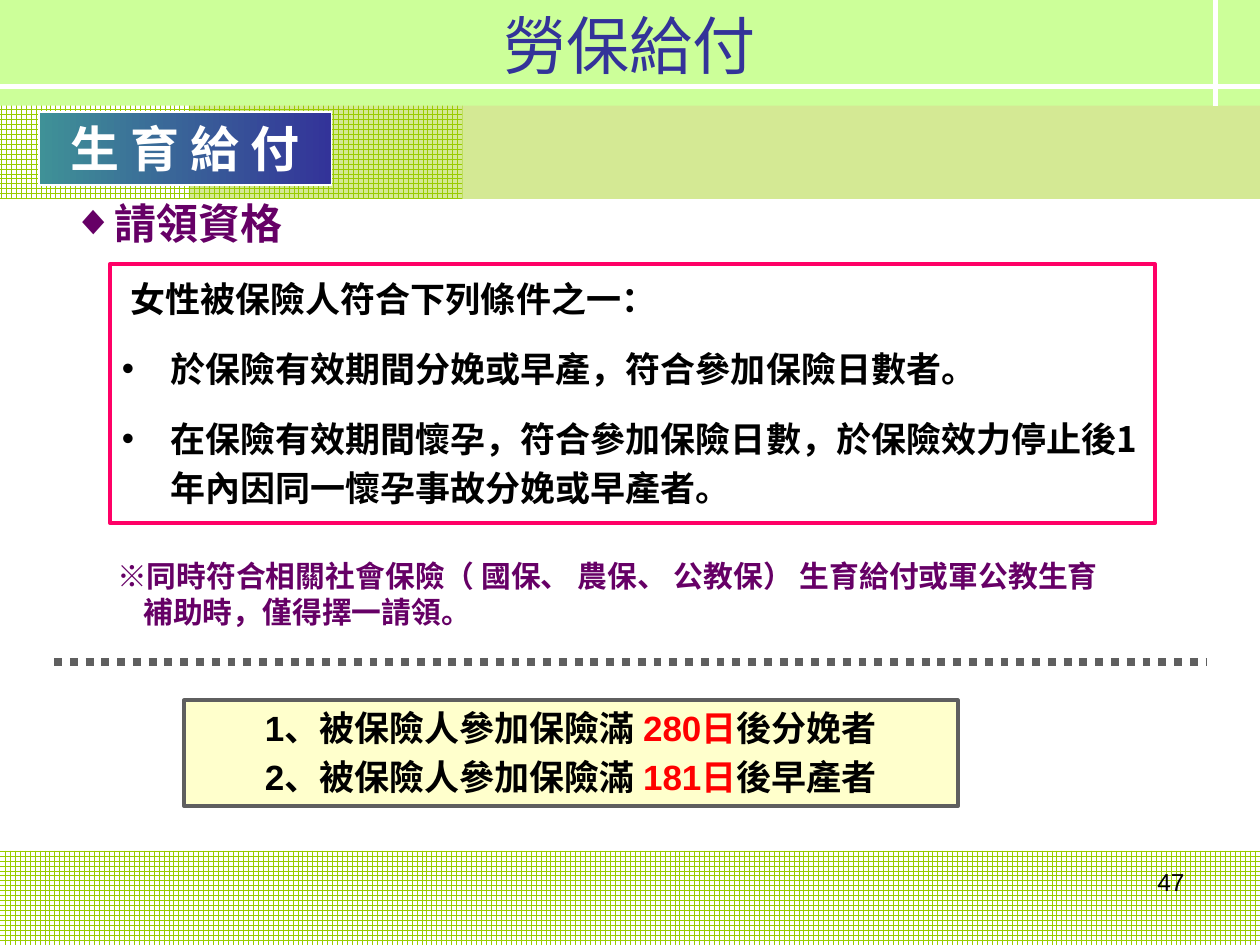
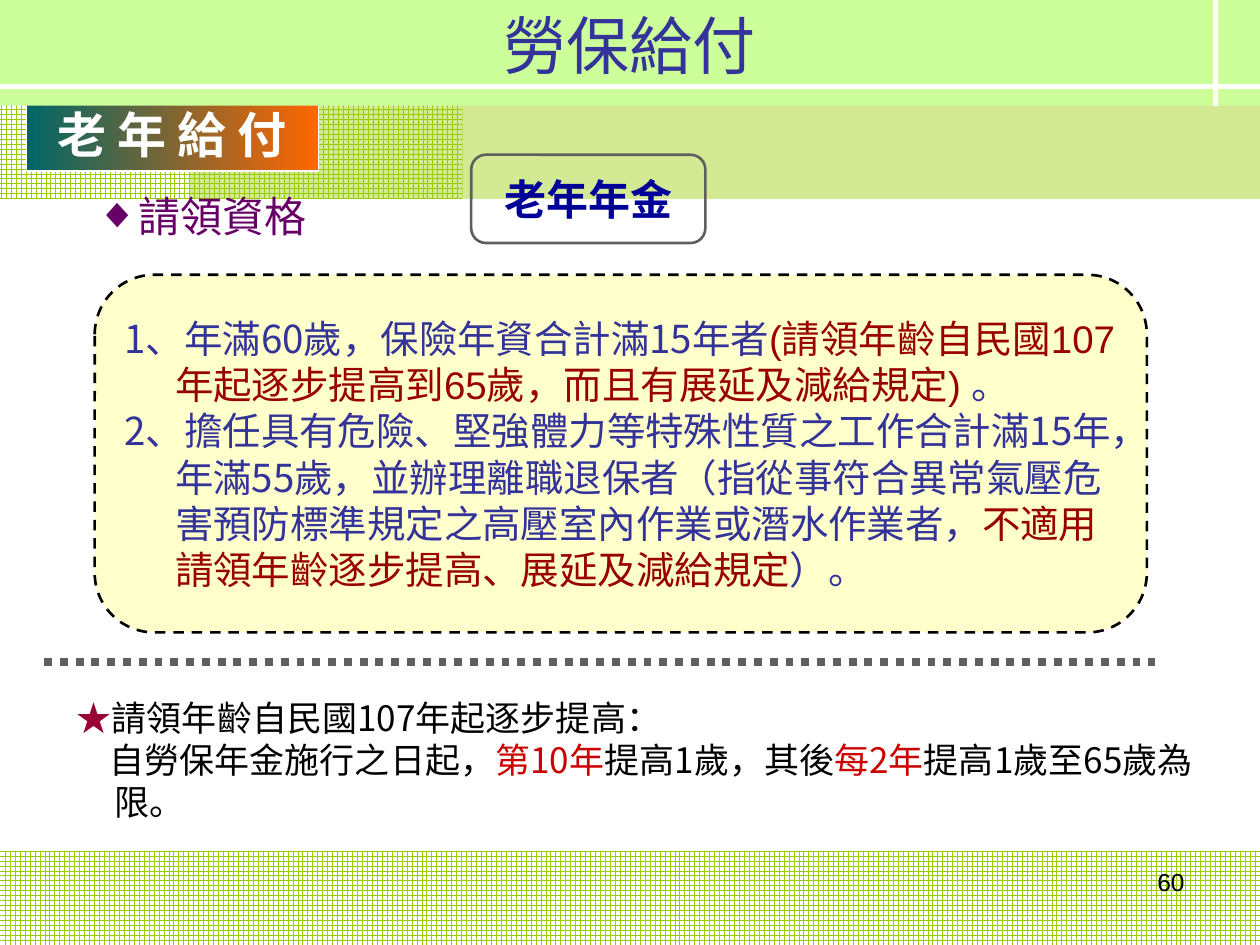
from dataclasses import dataclass

from lxml.etree import SubElement
from pptx import Presentation
from pptx.dml.color import RGBColor
from pptx.enum.dml import MSO_LINE, MSO_PATTERN
from pptx.enum.shapes import MSO_CONNECTOR, MSO_SHAPE
from pptx.enum.text import MSO_ANCHOR, PP_ALIGN
from pptx.oxml.ns import qn
from pptx.util import Cm, Pt


@dataclass(frozen=True)
class Theme:
    white: str = "FFFFFF"
    black: str = "000000"
    grid: str = "99CC00"
    header: str = "CCFF99"
    indigo: str = "333399"
    purple: str = "660066"
    navy: str = "000099"
    gray: str = "5F5F5F"
    cream: str = "FFFFCC"
    pink: str = "FF0066"
    red: str = "FF0000"
    crimson: str = "CC0000"
    maroon: str = "990000"
    wine: str = "990033"
    latin: str = "Arial"
    cjk: str = "Noto Sans CJK TC"
    title: int = 36
    badge: int = 28
    heading: int = 24
    clause: int = 22
    body: int = 20
    note: int = 17
    number: int = 14
    leading: float = 1.2


T = Theme()

# A paragraph is a list of (text, colour) or (text, colour, font) runs.
TITLE = "勞保給付"
HEADING = "請領資格"

MATERNITY = {"badge": "生 育 給 付", "ends": ("3F9197", T.indigo), "number": "47"}
MATERNITY_RULES = [
    [("女性被保險人符合下列條件之一：", T.black)],
    [("於保險有效期間分娩或早產，符合參加保險日數者。", T.black)],
    [("在保險有效期間懷孕，符合參加保險日數，於保險效力停止後1年內因同一懷孕事故分娩或早產者。", T.black)],
]
MATERNITY_NOTE = [
    [("※同時符合相關社會保險（ 國保、 農保、 公教保） 生育給付或軍公教生育", T.purple)],
    [("補助時，僅得擇一請領。", T.purple)],
]
INSURED_DAYS = [
    [(f"{order}、被保險人參加保險滿 ", T.black), (f"{days}日", T.red), (f"後{event}者", T.black)]
    for order, days, event in [(1, 280, "分娩"), (2, 181, "早產")]
]

OLD_AGE = {"badge": "老 年 給 付", "ends": ("006666", "FF6600"), "number": "60"}
PENSION = "老年年金"
PENSION_RULES = [
    [("1、年滿60歲，保險年資合計滿15年者", T.indigo),
     ("(請領年齡自民國107年起逐步提高到65歲，而且有展延及減給規定) ", T.maroon, T.latin),
     ("。", T.indigo)],
    [("2、擔任具有危險、堅強體力等特殊性質之工作合計滿15年，年滿55歲，並辦理離職退保者"
      "（指從事符合異常氣壓危害預防標準規定之高壓室內作業或潛水作業者，", T.indigo),
     ("不適用請領年齡逐步提高、展延及減給規定", T.maroon, T.latin),
     ("）。", T.indigo)],
]
AGE_NOTE = [
    [("★", T.wine, T.latin), ("請領年齡自民國107年起逐步提高：", T.black)],
    [("自勞保年金施行之日起，", T.black), ("第10年", T.crimson), ("提高1歲，其後", T.black),
     ("每2年", T.crimson), ("提高1歲至65歲為限。", T.black)],
]


def rgb(color):
    return RGBColor.from_string(color)


def cm(place):
    return [Cm(length) for length in place]


def add_box(slide, place, kind=MSO_SHAPE.RECTANGLE, fill=None, line=None, weight=0.75, dash=None):
    box = slide.shapes.add_shape(kind, *cm(place))
    box.shadow.inherit = False
    if fill:
        box.fill.solid()
        box.fill.fore_color.rgb = rgb(fill)
    else:
        box.fill.background()
    if line:
        box.line.color.rgb = rgb(line)
        box.line.width = Pt(weight)
        if dash:
            box.line.dash_style = dash
    else:
        box.line.fill.background()
    return box


def add_text(slide, place):
    return slide.shapes.add_textbox(*cm(place))


def add_rule(slide, x1, y1, x2, y2, color, weight, dash=None):
    rule = slide.shapes.add_connector(MSO_CONNECTOR.STRAIGHT, *cm((x1, y1, x2, y2)))
    rule.line.color.rgb = rgb(color)
    rule.line.width = Pt(weight)
    if dash:
        rule.line.dash_style = dash
    SubElement(rule._element.spPr, qn("a:effectLst"))


def indent(paragraph, margin, first, bullet=None):
    """Set the left margin and first-line offset in cm, and an optional bullet."""
    props = paragraph._p.get_or_add_pPr()
    props.set("marL", str(Cm(margin)))
    props.set("indent", str(Cm(first)))
    if bullet:
        SubElement(props, qn("a:buFont")).set("typeface", T.latin)
        SubElement(props, qn("a:buChar")).set("char", bullet)


def write(shape, paragraphs, size, font=T.cjk, bold=False, align=PP_ALIGN.LEFT,
          anchor=MSO_ANCHOR.TOP, leading=None, before=0, wrap=True):
    """Fill a shape with paragraphs of coloured runs and return its paragraphs."""
    frame = shape.text_frame
    frame.word_wrap = wrap
    frame.vertical_anchor = anchor
    frame.text = "\n".join("".join(run[0] for run in runs) for runs in paragraphs)
    for paragraph, runs in zip(frame.paragraphs, paragraphs):
        paragraph.alignment = align
        paragraph.line_spacing = Pt(leading or size * T.leading)
        paragraph.space_before = Pt(before)
        paragraph.runs[0].text = runs[0][0]
        for text, *_ in runs[1:]:
            paragraph.add_run().text = text
        for run, (_, color, *face) in zip(paragraph.runs, runs):
            run.font.size = Pt(size)
            run.font.bold = bold
            run.font.name = face[0] if face else font
            run.font.color.rgb = rgb(color)
            SubElement(run._r.get_or_add_rPr(), qn("a:ea")).set("typeface", T.cjk)
    return frame.paragraphs


def add_base(deck, topic, badge_left, badge_top):
    """Add a slide with the shared bands, page number, badge and title."""
    slide = deck.slides.add_slide(deck.slide_layouts[6])
    for place in [(0, 17.15, 25.4, 1.9), (0, 0, 9.32, 4.01)]:
        band = add_box(slide, place, MSO_SHAPE.FLOWCHART_PROCESS)
        band.fill.patterned()
        band.fill.pattern = MSO_PATTERN.LARGE_GRID
        band.fill.fore_color.rgb = rgb(T.grid)
        band.fill.back_color.rgb = rgb(T.white)
    veil = add_box(slide, (3.81, 0, 21.59, 4.01), MSO_SHAPE.FLOWCHART_PROCESS, T.grid)
    tint = veil._element.spPr.find(qn("a:solidFill"))[0]
    SubElement(tint, qn("a:alpha")).set("val", "42000")
    write(add_text(slide, (18.21, 17.35, 5.92, 1.32)), [[(topic["number"], T.black)]],
          T.number, T.latin, align=PP_ALIGN.RIGHT)

    badge = add_box(slide, (badge_left, badge_top, 5.89, 1.47), line=T.white)
    badge.fill.gradient()
    badge.fill.gradient_angle = 0
    for stop, color in zip(badge.fill.gradient_stops, topic["ends"]):
        stop.color.rgb = rgb(color)
    write(badge, [[(topic["badge"], T.white)]], T.badge, T.latin, True, PP_ALIGN.CENTER)

    header = add_box(slide, (0, 0, 25.4, 2.13), fill=T.header)
    write(header, [[(TITLE, T.indigo)]], T.title, T.latin, align=PP_ALIGN.CENTER)
    add_rule(slide, 0, 1.75, 25.4, 1.75, T.white, 3)
    add_rule(slide, 24.51, 0, 24.51, 2.13, T.white, 3)
    return slide


def add_heading(slide, place, bold, align):
    heading, = write(add_text(slide, place), [[(HEADING, T.purple)]], T.heading, T.latin,
                     bold, align, MSO_ANCHOR.MIDDLE)
    indent(heading, 0.76, -0.76, "◆")


def add_divider(slide, left, right):
    add_rule(slide, left, 13.34, right, 13.34, T.gray, 4.5, MSO_LINE.ROUND_DOT)


def build_maternity(deck):
    slide = add_base(deck, MATERNITY, 0.79, 2.26)
    add_heading(slide, (0.69, 3.58, 5.79, 1.8), True, PP_ALIGN.CENTER)
    add_divider(slide, 1.09, 24.31)

    days = add_box(slide, (3.71, 14.12, 15.6, 2.13), fill=T.cream, line=T.gray, weight=2.25)
    write(days, INSURED_DAYS, T.body, T.latin, True, PP_ALIGN.CENTER, before=4)

    note = write(add_text(slide, (2.11, 11.13, 20.37, 1.7)), MATERNITY_NOTE, T.note, bold=True)
    indent(note[1], 0.53, 0)

    rules = add_box(slide, (2.21, 5.33, 21.08, 5.21), line=T.pink, weight=2.25)
    lead, *conditions = write(rules, MATERNITY_RULES, T.body, bold=True, leading=28, before=12)
    indent(lead, 0.17, 0)
    for condition in conditions:
        indent(condition, 0.97, -0.97, "•")


def build_old_age(deck):
    slide = add_base(deck, OLD_AGE, 0.53, 1.98)
    rules = add_box(slide, (1.91, 5.54, 21.21, 7.21), MSO_SHAPE.ROUNDED_RECTANGLE,
                    T.cream, T.black, 1.5, MSO_LINE.DASH)
    for rule in write(rules, PENSION_RULES, T.clause, anchor=MSO_ANCHOR.MIDDLE):
        indent(rule, 1.02, -1.02)

    add_heading(slide, (1.7, 3.53, 5.28, 1.63), False, PP_ALIGN.LEFT)
    pension = add_box(slide, (9.5, 3.12, 4.72, 1.78), MSO_SHAPE.ROUNDED_RECTANGLE,
                      line=T.gray, weight=1.5)
    write(pension, [[(PENSION, T.navy)]], T.heading, bold=True, align=PP_ALIGN.CENTER,
          anchor=MSO_ANCHOR.MIDDLE, wrap=False)

    starred, detail = write(add_text(slide, (1.3, 13.51, 23.19, 3.61)), AGE_NOTE, T.body,
                            anchor=MSO_ANCHOR.MIDDLE)
    indent(starred, 0.76, -0.76)
    indent(detail, 0.76, -0.1)
    add_divider(slide, 0.89, 23.29)


def main():
    deck = Presentation()
    deck.slide_width, deck.slide_height = Cm(25.4), Cm(19.05)
    build_maternity(deck)
    build_old_age(deck)
    deck.save("out.pptx")


if __name__ == "__main__":
    main()
